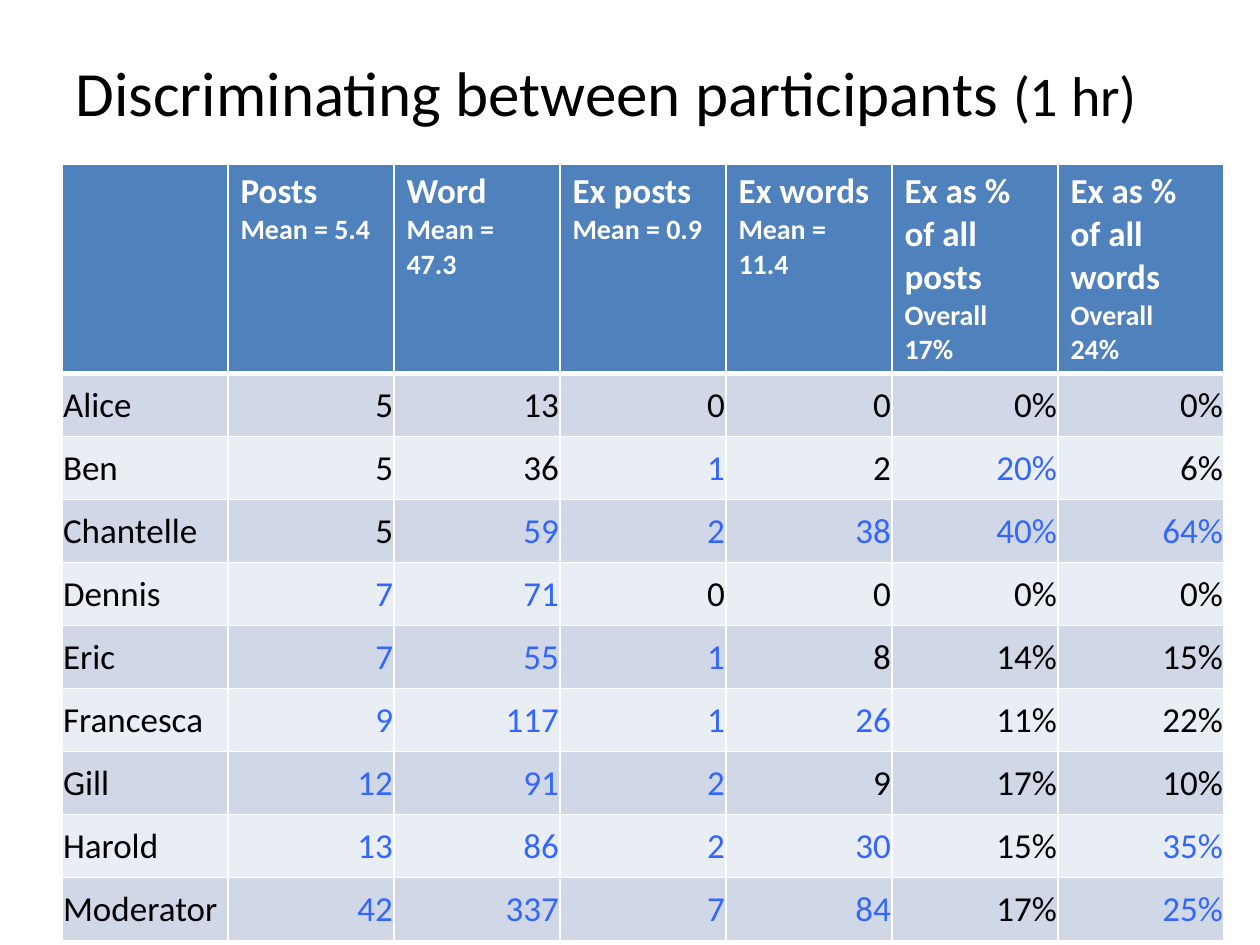
from lxml import etree
from pptx import Presentation
from pptx.dml.color import RGBColor
from pptx.enum.text import MSO_ANCHOR, MSO_AUTO_SIZE, PP_ALIGN
from pptx.oxml.ns import qn
from pptx.util import Inches, Pt

LEFT, RIGHT = PP_ALIGN.LEFT, PP_ALIGN.RIGHT
MIDDLE = MSO_ANCHOR.MIDDLE
NO_AUTOFIT = MSO_AUTO_SIZE.NONE

PX = Inches(1) / 126
FONT = "Calibri"
BLACK = RGBColor(0x00, 0x00, 0x00)
WHITE = RGBColor(0xFF, 0xFF, 0xFF)
HEADER_BLUE = RGBColor(0x4F, 0x81, 0xBD)
ABOVE_BLUE = RGBColor(0x33, 0x66, 0xFF)
BANDS = RGBColor(0xD0, 0xD8, 0xE8), RGBColor(0xE9, 0xED, 0xF4)

TITLE_BOX = 63, 38, 1176, 106
TABLE_BOX = 62, 164, 1162, 774
HEADER_HEIGHT = 207

# Heading, its summary line, the threshold in it, and the unit of the values
MEASURES = [
    ("Posts", "Mean = 5.4", 5.4, ""),
    ("Word", "Mean = 47.3", 47.3, ""),
    ("Ex posts", "Mean = 0.9", 0.9, ""),
    ("Ex words", "Mean = 11.4", 11.4, ""),
    ("Ex as % of all posts", "Overall\v17%", 17, "%"),
    ("Ex as % of all words", "Overall\v24%", 24, "%"),
]
PARTICIPANTS = [
    ("Alice", 5, 13, 0, 0, 0, 0),
    ("Ben", 5, 36, 1, 2, 20, 6),
    ("Chantelle", 5, 59, 2, 38, 40, 64),
    ("Dennis", 7, 71, 0, 0, 0, 0),
    ("Eric", 7, 55, 1, 8, 14, 15),
    ("Francesca", 9, 117, 1, 26, 11, 22),
    ("Gill", 12, 91, 2, 9, 17, 10),
    ("Harold", 13, 86, 2, 30, 15, 35),
    ("Moderator", 42, 337, 7, 84, 17, 25),
]


def px(length):
    return round(length * PX)


def set_font(paragraph, size, color, bold=False):
    font = paragraph.font
    font.name, font.size, font.bold = FONT, Pt(size), bold
    font.color.rgb = color


def style_cell(cell, fill, top=1, bottom=1):
    """Give the cell white borders, with widths in points, and a plain fill."""
    properties = cell._tc.get_or_add_tcPr()
    for side, width in (("L", 1), ("R", 1), ("T", top), ("B", bottom)):
        border = etree.SubElement(properties, qn(f"a:ln{side}"), w=str(Pt(width)))
        border_fill = etree.SubElement(border, qn("a:solidFill"))
        etree.SubElement(border_fill, qn("a:srgbClr"), val=str(WHITE))
    cell.fill.solid()
    cell.fill.fore_color.rgb = fill


def fill_header(cells):
    for cell in cells:
        style_cell(cell, HEADER_BLUE, bottom=3)
    for cell, (heading, summary, _, _) in zip(cells[1:], MEASURES):
        lines = cell.text_frame
        lines.text = heading
        set_font(lines.paragraphs[0], 20, WHITE, bold=True)
        summary_line = lines.add_paragraph()
        summary_line.text = summary
        set_font(summary_line, 16, WHITE, bold=True)


def fill_body_cell(cell, text, color, align):
    cell.margin_left = cell.margin_right = cell.margin_top = px(1)
    cell.margin_bottom = 0
    cell.vertical_anchor = MIDDLE
    cell.text = text
    paragraph = cell.text_frame.paragraphs[0]
    paragraph.alignment = align
    set_font(paragraph, 20, color)


def fill_participant(cells, index, name, values):
    """Write one participant, with values above the threshold in blue."""
    for cell in cells:
        style_cell(cell, BANDS[index % 2], top=3 if index == 0 else 1)
    fill_body_cell(cells[0], name, BLACK, LEFT)
    for cell, value, (_, _, threshold, unit) in zip(cells[1:], values, MEASURES):
        color = ABOVE_BLUE if value > threshold else BLACK
        fill_body_cell(cell, f"{value}{unit}", color, RIGHT)


def add_participant_table(slide, box):
    left, top, width, height = box
    row_count, column_count = len(PARTICIPANTS) + 1, len(MEASURES) + 1
    table = slide.shapes.add_table(
        row_count, column_count, px(left), px(top), px(width), px(height)
    ).table
    for column in table.columns:
        column.width = px(width / column_count)
    header, *body = table.rows
    header.height = px(HEADER_HEIGHT)
    fill_header(list(header.cells))
    for index, (row, (name, *values)) in enumerate(zip(body, PARTICIPANTS)):
        row.height = px((height - HEADER_HEIGHT) / len(PARTICIPANTS))
        fill_participant(list(row.cells), index, name, values)


def place_title(slide, box):
    title = slide.shapes.title
    title.left, title.top, title.width, title.height = map(px, box)
    frame = title.text_frame
    frame.auto_size = NO_AUTOFIT
    frame.word_wrap = True
    frame.vertical_anchor = MIDDLE
    paragraph = frame.paragraphs[0]
    paragraph.alignment = LEFT
    set_font(paragraph, 36, BLACK)
    for text, size in (("Discriminating between participants ", 36), ("(1 hr)", 32)):
        run = paragraph.add_run()
        run.text = text
        run.font.size = Pt(size)


def main():
    presentation = Presentation()
    presentation.slide_width, presentation.slide_height = Inches(10), Inches(7.5)
    slide = presentation.slides.add_slide(
        presentation.slide_layouts.get_by_name("Title Only")
    )
    add_participant_table(slide, TABLE_BOX)
    place_title(slide, TITLE_BOX)
    presentation.save("out.pptx")


if __name__ == "__main__":
    main()
